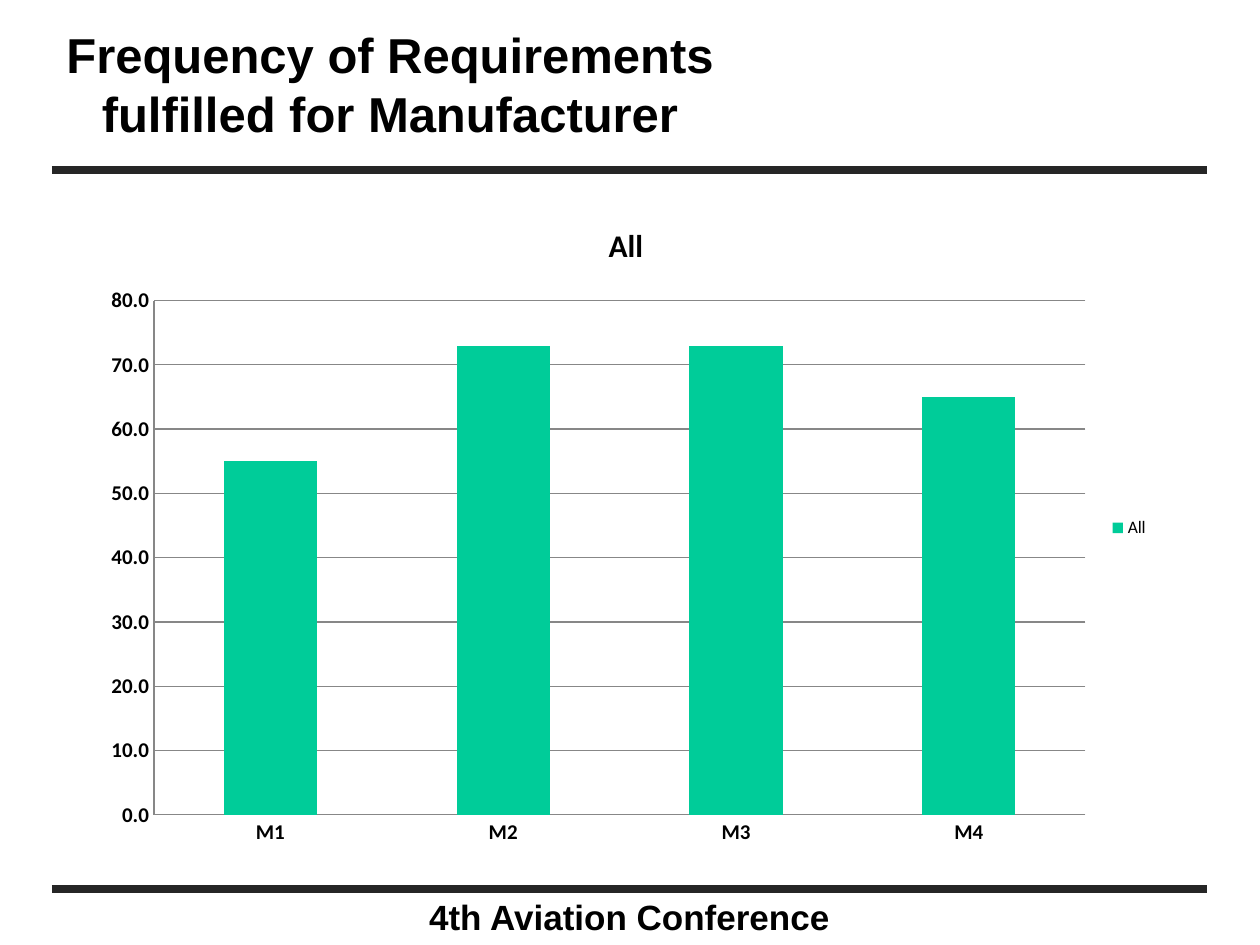
"""Build the slide on how often each manufacturer fulfils the requirements."""
from dataclasses import dataclass

import pptx
import pptx.chart.data
import pptx.dml.color
import pptx.enum.chart
import pptx.enum.shapes
import pptx.enum.text
import pptx.oxml.ns
import pptx.util
from lxml import etree

RGB = pptx.dml.color.RGBColor
Pt = pptx.util.Pt
CHART = pptx.enum.chart
TEXT = pptx.enum.text

BLACK = RGB(0x00, 0x00, 0x00)
DARK = RGB(0x26, 0x26, 0x26)
GREY = RGB(0x87, 0x87, 0x87)
GREEN = RGB(0x00, 0xCC, 0x99)

SCALE = 914400 / 126
INSET = 6


@dataclass
class Box:
    left: int
    top: int
    width: int
    height: int

    def emu(self) -> list[int]:
        return [px(self.left), px(self.top), px(self.width), px(self.height)]


@dataclass
class Rule:
    left: int
    right: int
    y: int


RULES = [Rule(52, 1207, 170), Rule(52, 1207, 889)]
TITLE = Box(56, 23, 668, 120)
FOOTER = Box(178, 890, 903, 52)
PLOT = Box(90, 198, 1072, 660)
SHARES = {"M1": 55, "M2": 73, "M3": 73, "M4": 65}


def px(num: int) -> int:
    return round(num * SCALE)


def apply(target, values: dict) -> None:
    for name, value in values.items():
        setattr(target, name, value)


def style(font, size: int, face: str, bold: bool = True) -> None:
    apply(font, {"size": Pt(size), "name": face, "bold": bold})
    font.color.rgb = BLACK


def draw_rule(slide, rule: Rule) -> None:
    line = slide.shapes.add_connector(
        pptx.enum.shapes.MSO_CONNECTOR.STRAIGHT,
        px(rule.left), px(rule.y), px(rule.right), px(rule.y))
    line.line.color.rgb = DARK
    line.line.width = Pt(4.5)
    etree.SubElement(line._element.spPr, pptx.oxml.ns.qn("a:effectLst"))


def fill_text(shape, box: Box, text: str, size: int, anchor, fit) -> None:
    apply(shape, dict(zip(("left", "top", "width", "height"), box.emu())))
    frame = shape.text_frame
    frame.text = text
    sides = ("left", "top", "right", "bottom")
    apply(frame, {f"margin_{side}": px(INSET) for side in sides})
    apply(frame, {"word_wrap": True, "auto_size": fit, "vertical_anchor": anchor})
    para = frame.paragraphs[0]
    para.alignment = TEXT.PP_ALIGN.CENTER
    style(para.runs[0].font, size, "Arial")


def draw_chart(slide, box: Box) -> None:
    data = pptx.chart.data.CategoryChartData(number_format="###0.0")
    data.categories = list(SHARES)
    data.add_series("All", list(SHARES.values()))
    chart = slide.shapes.add_chart(
        CHART.XL_CHART_TYPE.COLUMN_CLUSTERED, *box.emu(), data).chart
    style(chart.font, 10, "Calibri", False)
    chart.has_title = True
    head = chart.chart_title.text_frame
    head.text = "All"
    style(head.paragraphs[0].runs[0].font, 18, "Calibri")
    chart.has_legend = True
    apply(chart.legend, {"position": CHART.XL_LEGEND_POSITION.RIGHT,
                         "include_in_layout": False})
    style(chart.legend.font, 10, "Calibri", False)
    for axis in (chart.category_axis, chart.value_axis):
        apply(axis, {"major_tick_mark": CHART.XL_TICK_MARK.NONE,
                     "minor_tick_mark": CHART.XL_TICK_MARK.NONE})
        axis.format.line.color.rgb = GREY
        style(axis.tick_labels.font, 12, "Calibri")
    scale = chart.value_axis
    apply(scale, {"minimum_scale": 0, "maximum_scale": 80, "major_unit": 10,
                  "has_major_gridlines": True})
    scale.major_gridlines.format.line.color.rgb = GREY
    apply(scale.tick_labels, {"number_format": "###0.0",
                              "number_format_is_linked": False})
    plot = chart.plots[0]
    apply(plot, {"gap_width": 150, "vary_by_categories": False})
    fill = plot.series[0].format.fill
    fill.solid()
    fill.fore_color.rgb = GREEN


def main() -> None:
    deck = pptx.Presentation()
    apply(deck, {"slide_width": px(1260), "slide_height": px(945)})
    slide = deck.slides.add_slide(deck.slide_layouts[5])
    for rule in RULES:
        draw_rule(slide, rule)
    foot = slide.shapes.add_textbox(*FOOTER.emu())
    fill_text(foot, FOOTER, "4th Aviation Conference", 20,
              TEXT.MSO_ANCHOR.TOP, TEXT.MSO_AUTO_SIZE.SHAPE_TO_FIT_TEXT)
    fill_text(slide.shapes.title, TITLE,
              "Frequency of Requirements fulfilled for Manufacturer", 28,
              TEXT.MSO_ANCHOR.MIDDLE, TEXT.MSO_AUTO_SIZE.NONE)
    draw_chart(slide, PLOT)
    deck.save("out.pptx")


if __name__ == "__main__":
    main()
